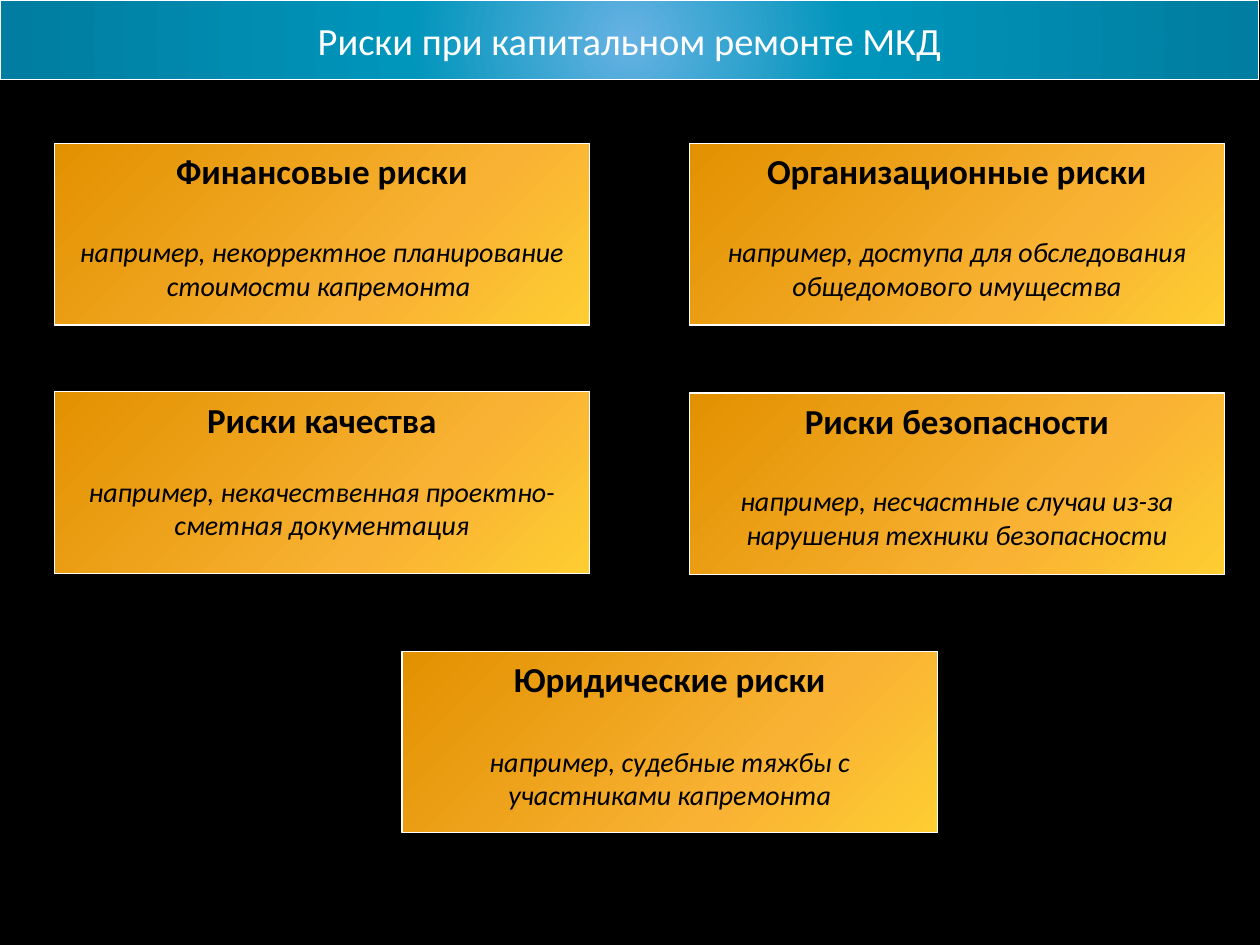
"""Build a slide with five risk cards for major repairs of apartment buildings."""
from pptx import Presentation
from pptx.dml.color import RGBColor
from pptx.enum.shapes import MSO_SHAPE as Shape
from pptx.enum.text import MSO_ANCHOR as Anchor, MSO_AUTO_SIZE as AutoSize, PP_ALIGN as Align
from pptx.oxml import parse_xml
from pptx.oxml.ns import nsdecls
from pptx.util import Inches, Pt

BLACK = RGBColor(0x00, 0x00, 0x00)
WHITE = RGBColor(0xFF, 0xFF, 0xFF)
GOLD = RGBColor(0xFE, 0xCD, 0x32)
ORANGE = RGBColor(0xF9, 0xB2, 0x33)
AMBER = RGBColor(0xE2, 0x91, 0x00)
SKY = RGBColor(0x66, 0xB2, 0xE3)
TEAL = RGBColor(0x00, 0x95, 0xBB)
DEEP_TEAL = RGBColor(0x00, 0x7D, 0xA0)


def paint(box, stops, left_top, right_bottom):
    box.fill.background()
    marks = "".join(
        f'<a:gs pos="{share * 1000}"><a:srgbClr val="{color}"/></a:gs>'
        for share, color in stops
    )
    gradient = parse_xml(
        f'<a:gradFill {nsdecls("a")} rotWithShape="1"><a:gsLst>{marks}</a:gsLst>'
        f'<a:path path="circle"><a:fillToRect l="{left_top * 1000}" t="{left_top * 1000}" '
        f'r="{right_bottom * 1000}" b="{right_bottom * 1000}"/></a:path></a:gradFill>'
    )
    properties = box.element.spPr
    properties.replace(properties.find("{*}noFill"), gradient)
    box.line.color.rgb = WHITE
    box.line.width = Pt(0.75)


def write(para, text, size, color=BLACK, bold=False, italic=False, gap=0):
    para.alignment = Align.CENTER
    para.space_before = Pt(gap)
    span = para.add_run()
    span.text = text
    span.font.name = "Calibri"
    span.font.size = Pt(size)
    span.font.color.rgb = color
    span.font.bold = bold
    span.font.italic = italic


deck = Presentation()
deck.slide_width, deck.slide_height = Inches(10), Inches(7.5)
page = deck.slides.add_slide(deck.slide_layouts[5])
page.background.fill.solid()
page.background.fill.fore_color.rgb = BLACK

title = page.shapes.title
title.left, title.top, title.width, title.height = 0, 0, Inches(9.99), Inches(0.63)
paint(title, [(0, SKY), (35, TEAL), (100, DEEP_TEAL)], 50, 50)
title.text_frame.auto_size = AutoSize.NONE
title.text_frame.vertical_anchor = Anchor.MIDDLE
write(title.text_frame.paragraphs[0], "Риски при капитальном ремонте МКД", 22, WHITE)

LEFT, RIGHT, MIDDLE = 0.43, 5.47, 3.19
CARD_WIDTH, CARD_HEIGHT = Inches(4.25), Inches(1.44)
cards = [
    (LEFT, 1.14, 24.4, "Финансовые риски",
     "например, некорректное планирование стоимости капремонта "),
    (RIGHT, 1.14, 24.4, "Организационные риски",
     "например, доступа для обследования общедомового имущества"),
    (LEFT, 3.11, 19.5, "Риски качества",
     "например, некачественная проектно-сметная документация"),
    (RIGHT, 3.12, 24.4, "Риски безопасности",
     "например, несчастные случаи из-за нарушения техники безопасности"),
    (MIDDLE, 5.17, 25.6, "Юридические риски",
     "например, судебные тяжбы с участниками капремонта"),
]
for column, row, gap, heading, example in cards:
    card = page.shapes.add_shape(
        Shape.RECTANGLE, Inches(column), Inches(row), CARD_WIDTH, CARD_HEIGHT
    )
    card.shadow.inherit = False
    paint(card, [(0, GOLD), (34, ORANGE), (100, AMBER)], 100, 0)
    frame = card.text_frame
    frame.word_wrap = True
    frame.vertical_anchor = Anchor.TOP
    write(frame.paragraphs[0], heading, 20, bold=True)
    write(frame.add_paragraph(), example, 16, italic=True, gap=gap)

deck.save("out.pptx")
